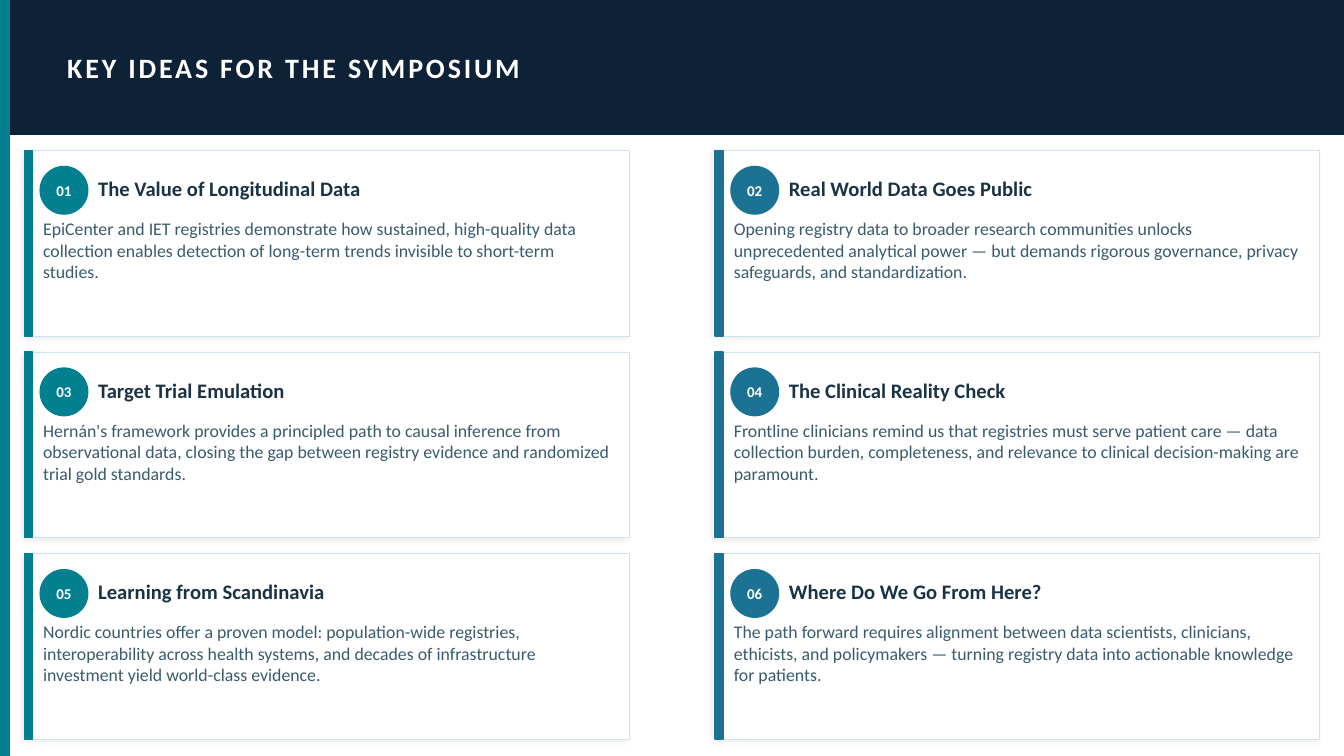
from lxml import etree
from pptx import Presentation
from pptx.dml.color import RGBColor
from pptx.enum.shapes import MSO_SHAPE
from pptx.enum.text import MSO_ANCHOR, PP_ALIGN
from pptx.oxml.ns import qn
from pptx.util import Pt

RECT, OVAL = MSO_SHAPE.RECTANGLE, MSO_SHAPE.OVAL
TOP, MIDDLE = MSO_ANCHOR.TOP, MSO_ANCHOR.MIDDLE
LEFT, CENTER = PP_ALIGN.LEFT, PP_ALIGN.CENTER
WIDE, HIGH = 960, 540
TEAL, BLUE, NAVY, WHITE = "028090", "1C7293", "0D2137", "FFFFFF"

IDEAS = [
    ("The Value of Longitudinal Data",
     "EpiCenter and IET registries demonstrate how sustained, high-quality data collection "
     "enables detection of long-term trends invisible to short-term studies."),
    ("Real World Data Goes Public",
     "Opening registry data to broader research communities unlocks unprecedented analytical "
     "power — but demands rigorous governance, privacy safeguards, and standardization."),
    ("Target Trial Emulation",
     "Hernán's framework provides a principled path to causal inference from observational "
     "data, closing the gap between registry evidence and randomized trial gold standards."),
    ("The Clinical Reality Check",
     "Frontline clinicians remind us that registries must serve patient care — data collection "
     "burden, completeness, and relevance to clinical decision-making are paramount."),
    ("Learning from Scandinavia",
     "Nordic countries offer a proven model: population-wide registries, interoperability "
     "across health systems, and decades of infrastructure investment yield world-class evidence."),
    ("Where Do We Go From Here?",
     "The path forward requires alignment between data scientists, clinicians, ethicists, and "
     "policymakers — turning registry data into actionable knowledge for patients."),
]


def color(value):
    return RGBColor.from_string(value)


def add_shape(slide, kind, x, y, w, h, fill, line=None, width=1):
    shape = slide.shapes.add_shape(kind, Pt(x), Pt(y), Pt(w), Pt(h))
    shape.shadow.inherit = False
    shape.fill.solid()
    shape.fill.fore_color.rgb = color(fill)
    shape.line.color.rgb = color(line or fill)
    shape.line.width = Pt(width)
    return shape


def write(frame, text, size, ink, bold=False, anchor=MIDDLE, align=LEFT):
    frame.word_wrap = True
    frame.vertical_anchor = anchor
    frame.margin_left = frame.margin_right = frame.margin_top = frame.margin_bottom = 0
    para = frame.paragraphs[0]
    para.text = text
    para.alignment = align
    font = para.font
    font.name, font.size, font.bold = "Calibri", Pt(size), bold
    font.color.rgb = color(ink)
    return para


def add_text(slide, x, y, w, h, *args, **style):
    box = slide.shapes.add_textbox(Pt(x), Pt(y), Pt(w), Pt(h))
    return write(box.text_frame, *args, **style)


def add_shadow(shape):
    effects = shape._element.spPr.find(qn("a:effectLst"))
    shadow = etree.SubElement(effects, qn("a:outerShdw"), blurRad=str(Pt(4)),
                              dist=str(Pt(2)), dir=str(135 * 60000), algn="bl", rotWithShape="0")
    tint = etree.SubElement(shadow, qn("a:srgbClr"), val="000000")
    etree.SubElement(tint, qn("a:alpha"), val="7000")


def add_header(slide, x, y, w, h):
    add_shape(slide, RECT, x, y, w, h, NAVY)
    title = add_text(slide, x + 48, y, w - 96, h, "KEY IDEAS FOR THE SYMPOSIUM", 20, WHITE, bold=True)
    title.runs[0]._r.get_or_add_rPr().set("spc", "200")


def add_card(slide, x, y, w, h, number, head, body, accent):
    add_shadow(add_shape(slide, RECT, x, y, w, h, WHITE, "D0E4EC", 0.5))
    add_shape(slide, RECT, x, y, 5.8, h, accent)
    badge = add_shape(slide, OVAL, x + 11.4, y + 11.4, 34, 34, accent)
    write(badge.text_frame, f"{number:02}", 10.7, WHITE, bold=True, align=CENTER)
    add_text(slide, x + 52.8, y + 10, w - 62.6, 34, head, 14.7, "1A3344", bold=True)
    add_text(slide, x + 13.5, y + 48.2, w - 23.8, h - 54, body, 12.7, "3A5A6E", anchor=TOP)


def add_grid(slide, x, y, w, h):
    wide, high = 432, 132.5
    across, down = w - wide, (h - high) / 2
    for i, (head, body) in enumerate(IDEAS):
        row, col = divmod(i, 2)
        add_card(slide, x + col * across, y + row * down, wide, high,
                 i + 1, head, body, (TEAL, BLUE)[col])


def main():
    deck = Presentation()
    deck.slide_width, deck.slide_height = Pt(WIDE), Pt(HIGH)
    slide = deck.slides.add_slide(deck.slide_layouts[6])
    add_header(slide, 0, 0, WIDE, 96)
    add_shape(slide, RECT, 0, 0, 6.7, HIGH, TEAL)
    add_grid(slide, 17.3, 107.5, 925.4, 420.5)
    deck.save("out.pptx")


if __name__ == "__main__":
    main()
